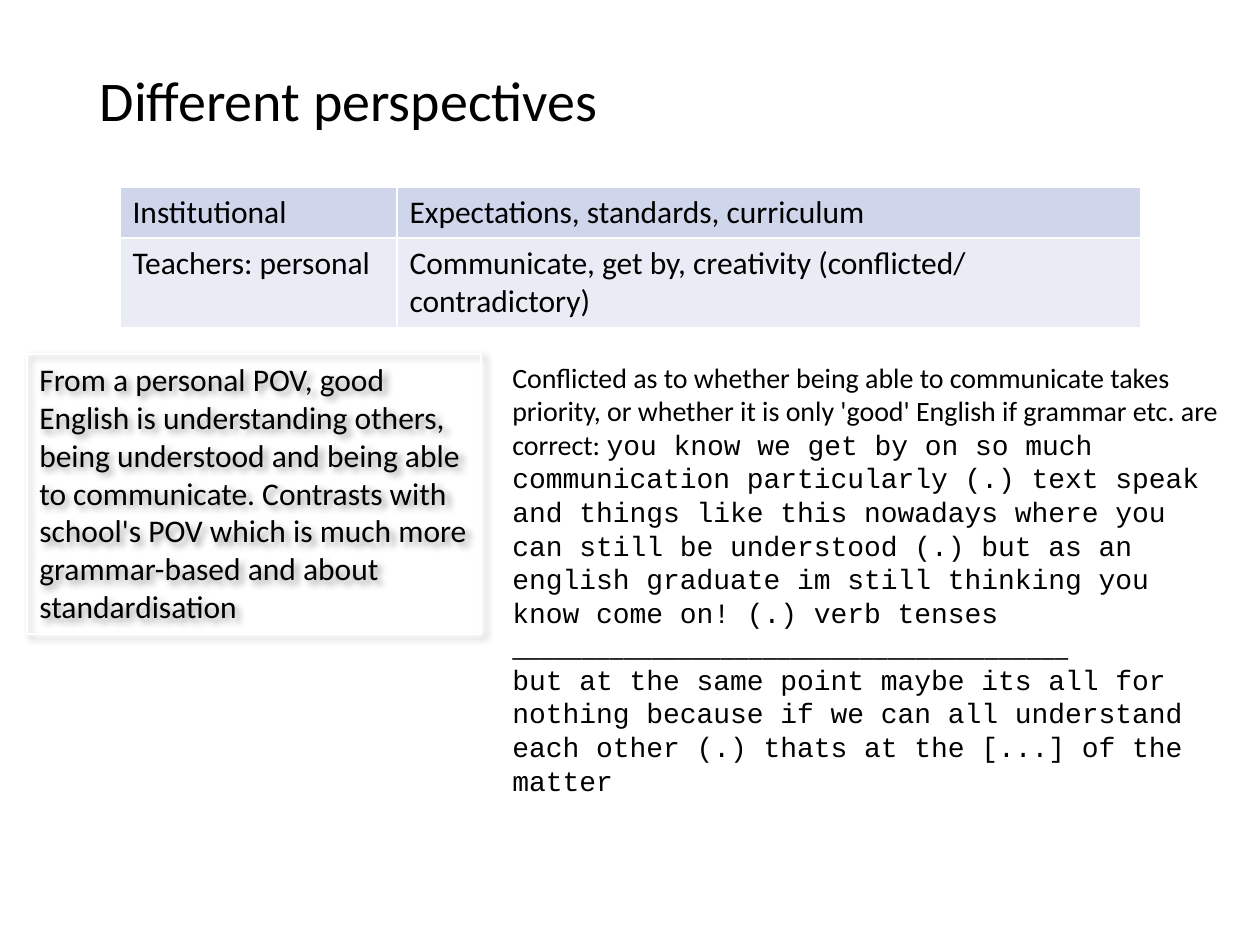
from dataclasses import dataclass

from lxml import etree
from pptx import Presentation
from pptx import util as u
from pptx.dml import color
from pptx.enum import shapes, text
from pptx.oxml import ns

EMU_PER_PX = 914400 / 126


@dataclass(frozen=True)
class Theme:
    ink: str = "000000"
    border: str = "FFFFFF"
    bands: tuple[str, ...] = ("CFD5EA", "E9EBF5")
    prose: str = "Calibri"
    speech: str = "Courier New"
    title_size: int = 32
    body_size: int = 18
    extract_size: int = 16


@dataclass(frozen=True)
class Box:
    left: int
    top: int
    width: int
    height: int

    def emu(self) -> tuple[int, ...]:
        return tuple(px(n) for n in (self.left, self.top, self.width, self.height))


@dataclass(frozen=True)
class Span:
    words: str
    font: str


THEME = Theme()
COLUMNS = (277, 744)
ROWS = (51, 88)
PERSPECTIVES = (
    ("Institutional", "Expectations, standards, curriculum"),
    ("Teachers: personal", "Communicate, get by, creativity (conflicted/ contradictory)"),
)
PERSONAL_VIEW = (
    "From a personal POV, good English is understanding others, being understood "
    "and being able to communicate. Contrasts with school's POV which is much more "
    "grammar-based and about standardisation"
)
EXTRACT = (
    (
        Span("Conflicted as to whether being able to communicate takes priority, or "
             "whether it is only 'good' English if grammar etc. are correct: ", THEME.prose),
        Span("you know we get by on so much communication particularly (.) text speak "
             "and things like this nowadays where you can still be understood (.) but as "
             "an english graduate im still thinking you know come on! (.) verb tenses",
             THEME.speech),
        Span(" " + "_" * 40, THEME.prose),
    ),
    (
        Span("but at the same point maybe its all for nothing because if we can all "
             "understand each other (.) thats at the [...] of the matter", THEME.speech),
    ),
)


def px(length: int) -> int:
    return round(length * EMU_PER_PX)


def rgb(value: str) -> color.RGBColor:
    return color.RGBColor.from_string(value)


def style(font, size: int, name: str = THEME.prose) -> None:
    font.size = u.Pt(size)
    font.name = name
    font.color.rgb = rgb(THEME.ink)


def style_frame(frame, size: int) -> None:
    for paragraph in frame.paragraphs:
        for run in paragraph.runs:
            style(run.font, size)


def add_title(slide, box: Box, words: str) -> None:
    title = slide.shapes.title
    title.left, title.top, title.width, title.height = box.emu()
    frame = title.text_frame
    frame.text = words
    frame.vertical_anchor = text.MSO_ANCHOR.MIDDLE
    frame.paragraphs[0].alignment = text.PP_ALIGN.LEFT
    frame.paragraphs[0].line_spacing = 0.9
    style_frame(frame, THEME.title_size)


def add_borders(cell) -> None:
    properties = cell._tc.get_or_add_tcPr()
    for position, side in enumerate(("lnL", "lnR", "lnT", "lnB")):
        line = etree.Element(ns.qn(f"a:{side}"), w=str(u.Pt(1)))
        fill = etree.SubElement(line, ns.qn("a:solidFill"))
        etree.SubElement(fill, ns.qn("a:srgbClr"), val=THEME.border)
        properties.insert(position, line)


def add_perspectives(slide, box: Box) -> None:
    table = slide.shapes.add_table(len(ROWS), len(COLUMNS), *box.emu()).table
    table.first_row = False
    table.horz_banding = False
    for column, width in zip(table.columns, COLUMNS):
        column.width = px(width)
    for row, height, entries, band in zip(table.rows, ROWS, PERSPECTIVES, THEME.bands):
        row.height = px(height)
        for cell, words in zip(row.cells, entries):
            cell.text_frame.text = words
            cell.fill.solid()
            cell.fill.fore_color.rgb = rgb(band)
            add_borders(cell)
            style_frame(cell.text_frame, THEME.body_size)


def add_shadow(shape) -> None:
    effects = etree.SubElement(shape._element.spPr, ns.qn("a:effectLst"))
    shadow = etree.SubElement(
        effects, ns.qn("a:outerShdw"), blurRad=str(u.Pt(4)), dist=str(u.Pt(3)),
        dir=str(45 * 60000), algn="tl", rotWithShape="0",
    )
    tint = etree.SubElement(shadow, ns.qn("a:srgbClr"), val=THEME.ink)
    etree.SubElement(tint, ns.qn("a:alpha"), val="40000")


def add_personal_view(slide, box: Box) -> None:
    view = slide.shapes.add_shape(shapes.MSO_SHAPE.RECTANGLE, *box.emu())
    view.fill.background()
    view.line.color.rgb = rgb(THEME.border)
    view.line.width = u.Pt(0.75)
    add_shadow(view)
    frame = view.text_frame
    frame.text = PERSONAL_VIEW
    frame.word_wrap = True
    frame.auto_size = text.MSO_AUTO_SIZE.SHAPE_TO_FIT_TEXT
    frame.vertical_anchor = text.MSO_ANCHOR.TOP
    frame.paragraphs[0].alignment = text.PP_ALIGN.LEFT
    style_frame(frame, THEME.body_size)


def add_extract(slide, box: Box) -> None:
    frame = slide.shapes.add_textbox(*box.emu()).text_frame
    frame.word_wrap = True
    frame.auto_size = text.MSO_AUTO_SIZE.SHAPE_TO_FIT_TEXT
    for index, spans in enumerate(EXTRACT):
        paragraph = frame.add_paragraph() if index else frame.paragraphs[0]
        for span in spans:
            run = paragraph.add_run()
            run.text = span.words
            style(run.font, THEME.extract_size, span.font)


def main() -> None:
    deck = Presentation()
    deck.slide_width, deck.slide_height = px(1260), px(945)
    slide = deck.slides.add_slide(deck.slide_layouts[5])
    add_title(slide, Box(87, 48, 1086, 110), "Different perspectives")
    add_perspectives(slide, Box(120, 187, sum(COLUMNS), sum(ROWS)))
    add_personal_view(slide, Box(27, 354, 454, 280))
    add_extract(slide, Box(500, 354, 733, 454))
    deck.save("out.pptx")


if __name__ == "__main__":
    main()
